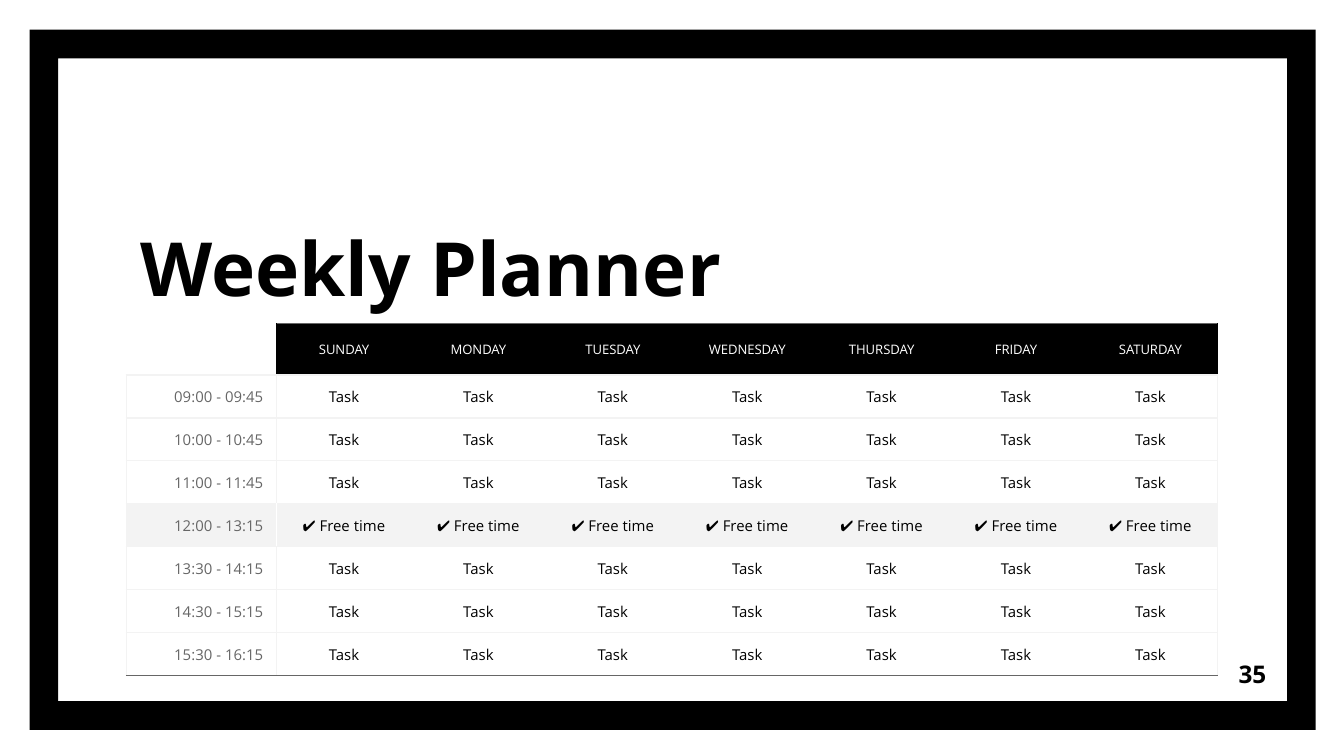
"""Build a weekly planner slide with a framed timetable."""
from lxml import etree
from pptx import Presentation
from pptx.dml.color import RGBColor
from pptx.enum.shapes import MSO_SHAPE
from pptx.enum.text import MSO_ANCHOR, PP_ALIGN
from pptx.oxml.ns import qn
from pptx.util import Inches, Pt

LEFT, CENTER, RIGHT = PP_ALIGN.LEFT, PP_ALIGN.CENTER, PP_ALIGN.RIGHT
MIDDLE, BOTTOM = MSO_ANCHOR.MIDDLE, MSO_ANCHOR.BOTTOM
FRAME = MSO_SHAPE.FRAME
PLAIN_TABLE_STYLE = "{2D5ABB26-0587-4C30-8999-92F81FD0307C}"
FONT = "Open Sans"
BLACK, WHITE, GRAY, PALE = "000000", "FFFFFF", "666666", "F3F3F3"

TITLE = "Weekly Planner"
PAGE_NUMBER = "35"
DAYS = ["SUNDAY", "MONDAY", "TUESDAY", "WEDNESDAY", "THURSDAY", "FRIDAY", "SATURDAY"]
TASK, FREE = "Task", "✔ Free time"
SLOTS = [
    ("09:00 - 09:45", TASK),
    ("10:00 - 10:45", TASK),
    ("11:00 - 11:45", TASK),
    ("12:00 - 13:15", FREE),
    ("13:30 - 14:15", TASK),
    ("14:30 - 15:15", TASK),
    ("15:30 - 16:15", TASK),
]
SLIDE_WIDTH = 10
SLIDE_HEIGHT = SLIDE_WIDTH * 9 / 16
TABLE_LEFT, TABLE_TOP = 0.94, 2.41
TIME_WIDTH, DAY_WIDTH = 1.12, 1
HEADER_HEIGHT, SLOT_HEIGHT = 0.38, 0.32


def rgb(color):
    """Turn a hex string into a colour."""
    return RGBColor.from_string(color)


def write(frame, text, size=8, color=BLACK, bold=False, align=LEFT):
    """Write one formatted line into a text frame."""
    line = frame.paragraphs[0]
    line.alignment = align
    run = line.add_run()
    run.text = text
    run.font.name = FONT
    run.font.size = Pt(size)
    run.font.bold = bold
    run.font.color.rgb = rgb(color)


def add_text(slide, text, box, anchor, **style):
    """Add a wrapping text box with even margins."""
    frame = slide.shapes.add_textbox(*map(Inches, box)).text_frame
    frame.word_wrap = True
    frame.vertical_anchor = anchor
    frame.margin_left = frame.margin_right = Inches(0.1)
    frame.margin_top = frame.margin_bottom = Inches(0.1)
    write(frame, text, **style)


def set_borders(cell, **colors):
    """Draw the named sides (L, R, T, B) of a cell and clear the others."""
    properties = cell._tc.get_or_add_tcPr()
    for position, side in enumerate("LRTB"):
        line = etree.Element(qn(f"a:ln{side}"), w=str(Pt(0.75)))
        if side in colors:
            fill = etree.SubElement(line, qn("a:solidFill"))
            etree.SubElement(fill, qn("a:srgbClr"), val=colors[side])
        else:
            etree.SubElement(line, qn("a:noFill"))
        properties.insert(position, line)


def fill_cell(cell, text, fill=None, **style):
    """Write a table cell and set its background."""
    cell.vertical_anchor = MIDDLE
    cell.margin_left = cell.margin_right = Inches(0.1)
    cell.margin_top = cell.margin_bottom = Inches(0.05)
    if fill:
        cell.fill.solid()
        cell.fill.fore_color.rgb = rgb(fill)
    else:
        cell.fill.background()
    write(cell.text_frame, text, **style)


def add_planner(slide):
    """Add the timetable of days and time slots."""
    width = TIME_WIDTH + DAY_WIDTH * len(DAYS)
    height = HEADER_HEIGHT + SLOT_HEIGHT * len(SLOTS)
    planner = slide.shapes.add_table(
        len(SLOTS) + 1, len(DAYS) + 1,
        *map(Inches, (TABLE_LEFT, TABLE_TOP, width, height))).table
    planner.first_row = planner.horz_banding = False
    planner._tbl.tblPr.find(qn("a:tableStyleId")).text = PLAIN_TABLE_STYLE
    for index, column in enumerate(planner.columns):
        column.width = Inches(DAY_WIDTH if index else TIME_WIDTH)
    for index, row in enumerate(planner.rows):
        row.height = Inches(SLOT_HEIGHT if index else HEADER_HEIGHT)

    corner = planner.cell(0, 0)
    corner.fill.background()
    corner.margin_top = corner.margin_bottom = 0
    set_borders(corner, R=BLACK, B=PALE)

    last_day, last_slot = len(DAYS), len(SLOTS)
    for column, day in enumerate(DAYS, 1):
        cell = planner.cell(0, column)
        fill_cell(cell, day, BLACK, size=7, color=WHITE, align=CENTER)
        sides = {"T": GRAY, "B": PALE}
        if column == 1:
            sides["L"] = BLACK
        if column == last_day:
            sides["R"] = BLACK
        set_borders(cell, **sides)

    for row, (time, activity) in enumerate(SLOTS, 1):
        fill = PALE if activity == FREE else None
        divider = WHITE if activity == FREE else PALE
        floor = GRAY if row == last_slot else PALE
        time_cell = planner.cell(row, 0)
        fill_cell(time_cell, time, fill, color=GRAY, align=RIGHT)
        set_borders(time_cell, L=PALE, R=divider, T=PALE, B=floor)
        for column in range(1, last_day + 1):
            cell = planner.cell(row, column)
            fill_cell(cell, activity, fill, align=CENTER)
            sides = {"T": PALE, "B": floor}
            if column == 1:
                sides["L"] = divider
            if column == last_day:
                sides["R"] = PALE
            set_borders(cell, **sides)


def main():
    """Build and save the slide."""
    deck = Presentation()
    deck.slide_width, deck.slide_height = Inches(SLIDE_WIDTH), Inches(SLIDE_HEIGHT)
    slide = deck.slides.add_slide(deck.slide_layouts[6])

    border = slide.shapes.add_shape(FRAME, *map(Inches, (0.22, 0.22, 9.57, 5.21)))
    border.adjustments[0] = 0.041
    border.shadow.inherit = False
    border.fill.solid()
    border.fill.fore_color.rgb = rgb(BLACK)
    border.line.fill.background()

    add_text(slide, TITLE, (0.95, 0.93, 5.57, 1.49), BOTTOM, size=40, bold=True)
    add_text(slide, PAGE_NUMBER, (8.92, 4.8, 0.6, 0.43), MIDDLE,
             size=13, bold=True, align=RIGHT)
    add_planner(slide)
    deck.save("out.pptx")


if __name__ == "__main__":
    main()
